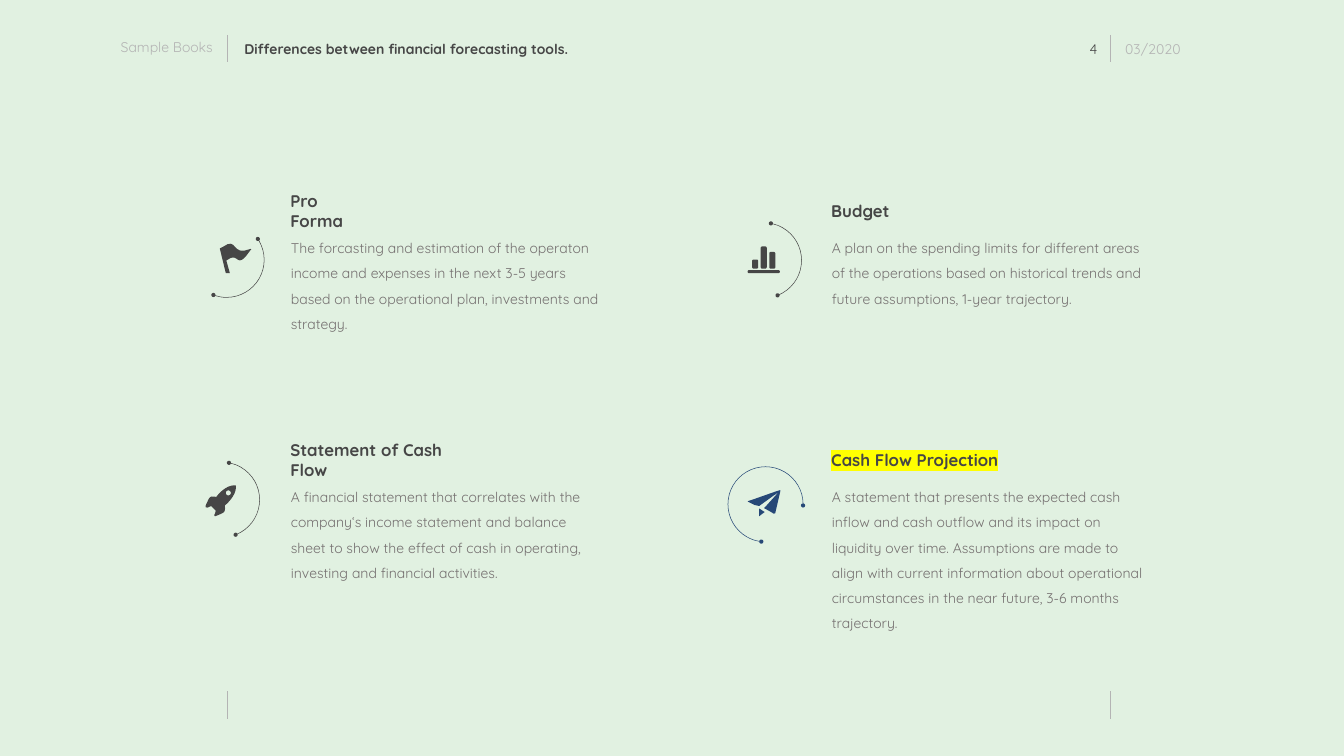
from lxml import etree
from pptx import Presentation
from pptx.dml.color import RGBColor
from pptx.enum import shapes, text
from pptx.oxml.ns import qn
from pptx.util import Emu, Pt

PX = 9144  # EMU; 100 px to the inch
FONT = "Quicksand"
COLORS = {
    "background": "E1F1E1",
    "dark": "464646",
    "body": "757070",
    "muted": "B4B4B4",
    "accent": "264877",
    "highlight": "FFFF00",
}
BODY_INSETS = (24, 12)
LABEL_INSETS = (10, 5)
RULE_XS = (450, 2203)

# Outlines: a pair is a line to a point, six numbers are a cubic curve.
ROCKET = [
    (446, 1003), (446, 1003, 470, 984, 468, 964), (467, 963),
    (447, 961, 429, 986, 429, 986), (414, 983, 416, 987, 408, 1003),
    (407, 1007, 409, 1007, 412, 1007), (419, 1004), (428, 1013),
    (428, 1013, 427, 1018, 426, 1020), (424, 1023, 426, 1025, 428, 1024),
    (444, 1017, 448, 1018, 446, 1003),
]
FLAG = [
    (497, 494), (457, 510, 473, 468, 442, 490), (436, 493), (448, 542),
    (456, 542), (449, 517), (477, 495, 466, 542, 498, 495),
    (500, 495, 498, 494, 497, 494),
]
PLANE_WING = [
    (1546, 973), (1544, 973, 1486, 994, 1485, 994),
    (1483, 994, 1483, 996, 1485, 996), (1497, 1002), (1506, 1004),
    (1506, 1004, 1543, 977, 1544, 977), (1517, 1007), (1516, 1008),
    (1517, 1009), (1517, 1009, 1534, 1018, 1534, 1019),
    (1536, 1019, 1537, 1019, 1538, 1018),
    (1538, 1017, 1548, 975, 1548, 974), (1548, 973, 1547, 972, 1546, 973),
]
PLANE_TAIL = [
    (1506, 1023), (1506, 1024, 1506, 1024, 1507, 1024),
    (1507, 1023, 1517, 1016, 1517, 1016), (1506, 1009),
]

# Title, title width, body, body height, left, top, highlighted
TOOLS = [
    ("Pro Forma", 183,
     "The forcasting and estimation of the operaton income and expenses in the "
     "next 3-5 years based on the operational plan, investments and strategy.",
     220, 553, 394, False),
    ("Budget", 136,
     "A plan on the spending limits for different areas of the operations based "
     "on historical trends and future assumptions, 1-year trajectory.",
     220, 1626, 394, False),
    ("Statement of Cash Flow", 401,
     "A financial statement that correlates with the company‘s income statement "
     "and balance sheet to show the effect of cash in operating, investing and "
     "financial activities.",
     220, 553, 888, False),
    ("Cash Flow Projection", 358,
     "A statement that presents the expected cash inflow and cash outflow and its "
     "impact on liquidity over time. Assumptions are made to align with current "
     "information about operational circumstances in the near future, 3-6 months "
     "trajectory.",
     321, 1626, 888, True),
]
# Left, top, start angle, end angle, colour
ARCS = [
    (375, 441, 56.25, 200.6, "dark"),
    (1441, 442, 10.61, 158.8, "dark"),
    (366, 917, 10.61, 158.8, "dark"),
    (1444, 926, 186.43, 91.81, "accent"),
]


def px(*values):
    return [Emu(v * PX) for v in values]


def rgb(name):
    return RGBColor.from_string(COLORS[name])


def add_text(slide, box, content, color, size=20, bold=False, insets=LABEL_INSETS,
             align=text.PP_ALIGN.LEFT, anchor=text.MSO_ANCHOR.TOP,
             spacing=None, highlight=False):
    tf = slide.shapes.add_textbox(*px(*box)).text_frame
    tf.word_wrap = True
    tf.auto_size = text.MSO_AUTO_SIZE.SHAPE_TO_FIT_TEXT
    tf.vertical_anchor = anchor
    tf.margin_left = tf.margin_right = Emu(insets[0] * PX)
    tf.margin_top = tf.margin_bottom = Emu(insets[1] * PX)
    p = tf.paragraphs[0]
    p.alignment = align
    if spacing:
        p.line_spacing = spacing
    r = p.add_run()
    r.text = content
    r.font.size = Pt(size)
    r.font.bold = bold
    r.font.color.rgb = rgb(color)
    if highlight:
        mark = etree.SubElement(r.font._element, qn("a:highlight"))
        etree.SubElement(mark, qn("a:srgbClr"), val=COLORS["highlight"])
    r.font.name = FONT


def add_rule(slide, x, top, bottom):
    line = slide.shapes.add_connector(
        shapes.MSO_CONNECTOR.STRAIGHT, *px(x, top, x, bottom))
    line.line.color.rgb = rgb("muted")
    line.line.width = Pt(0.75)
    etree.SubElement(line._element.spPr, qn("a:effectLst"))


def add_arc(slide, left, top, start, end, color):
    sp = slide.shapes.add_shape(shapes.MSO_SHAPE.ARC, *px(left, top, 149, 149))
    sp.rotation = 270
    for i, angle in enumerate((start, end)):
        sp.adjustments[i] = angle * 0.6  # 60000ths of a degree over 100000
    sp.fill.background()
    sp.line.color.rgb = rgb(color)
    sp.line.width = Pt(0.75)
    sp.shadow.inherit = False
    ln = sp.line._get_or_add_ln()
    for end_tag in ("a:headEnd", "a:tailEnd"):
        etree.SubElement(ln, qn(end_tag), type="oval")


def rounded(x, y, w, h, r):
    """Outline of a box with corners of radius r."""
    k = r * 0.45
    x2, y2 = x + w, y + h
    return [
        (x + r, y), (x2 - r, y), (x2 - k, y, x2, y + k, x2, y + r),
        (x2, y2 - r), (x2, y2 - k, x2 - k, y2, x2 - r, y2),
        (x + r, y2), (x + k, y2, x, y2 - k, x, y2 - r),
        (x, y + r), (x, y + k, x + k, y, x + r, y),
    ]


def flatten(outline, steps=8):
    """Points in EMU along the lines and curves of an outline."""
    points = [outline[0]]
    for seg in outline[1:]:
        if len(seg) == 2:
            points.append(seg)
            continue
        curve = (points[-1], seg[:2], seg[2:4], seg[4:])
        for i in range(1, steps + 1):
            t = i / steps
            weights = ((1 - t) ** 3, 3 * t * (1 - t) ** 2, 3 * t * t * (1 - t), t ** 3)
            points.append(tuple(
                sum(w * c[axis] for w, c in zip(weights, curve)) for axis in (0, 1)))
    return [(x * PX, y * PX) for x, y in points]


def add_icon(slide, outlines, color):
    first, *others = [flatten(outline) for outline in outlines]
    builder = slide.shapes.build_freeform(*first[0])
    builder.add_line_segments(first[1:], close=True)
    for points in others:
        builder.move_to(*points[0])
        builder.add_line_segments(points[1:], close=True)
    sp = builder.convert_to_shape()
    sp.fill.solid()
    sp.fill.fore_color.rgb = rgb(color)
    sp.line.fill.background()
    sp.shadow.inherit = False


def add_tool(slide, title, title_width, body, body_height, left, top, highlight):
    add_text(slide, (left, top + 53, 666, body_height), body, "body",
             insets=BODY_INSETS, spacing=1.5)
    add_text(slide, (left + 13, top, title_width, 50), title, "dark", size=24,
             bold=True, anchor=text.MSO_ANCHOR.MIDDLE, highlight=highlight)


def add_header(slide):
    right = text.PP_ALIGN.RIGHT
    add_text(slide, (66, 71, 366, 44), "Sample Books", "muted", align=right)
    add_text(slide, (475, 75, 858, 44),
             "Differences between financial forecasting tools.", "dark", bold=True)
    add_text(slide, (2106, 70, 91, 54), "4", "dark", insets=(20, 10), align=right)
    add_text(slide, (2222, 75, 366, 44), "03/2020", "muted")


def main():
    prs = Presentation()
    prs.slide_width, prs.slide_height = px(2666, 1500)
    slide = prs.slides.add_slide(prs.slide_layouts[6])
    slide.background.fill.solid()
    slide.background.fill.fore_color.rgb = rgb("background")

    add_header(slide)
    for x in RULE_XS:
        add_rule(slide, x, 69, 124)
        add_rule(slide, x, 1372, 1426)
    for tool in TOOLS:
        add_tool(slide, *tool)
    for arc in ARCS:
        add_arc(slide, *arc)

    bars = [rounded(x, top, 12, 533 - top, 3)
            for x, top in ((1492, 515), (1509, 489), (1526, 500))]
    add_icon(slide, [FLAG], "dark")
    add_icon(slide, [rounded(1483, 536, 64, 6, 3), *bars], "dark")
    add_icon(slide, [ROCKET, rounded(448, 973, 10, 10, 5)], "dark")
    add_icon(slide, [PLANE_WING, PLANE_TAIL], "accent")
    prs.save("out.pptx")


if __name__ == "__main__":
    main()
